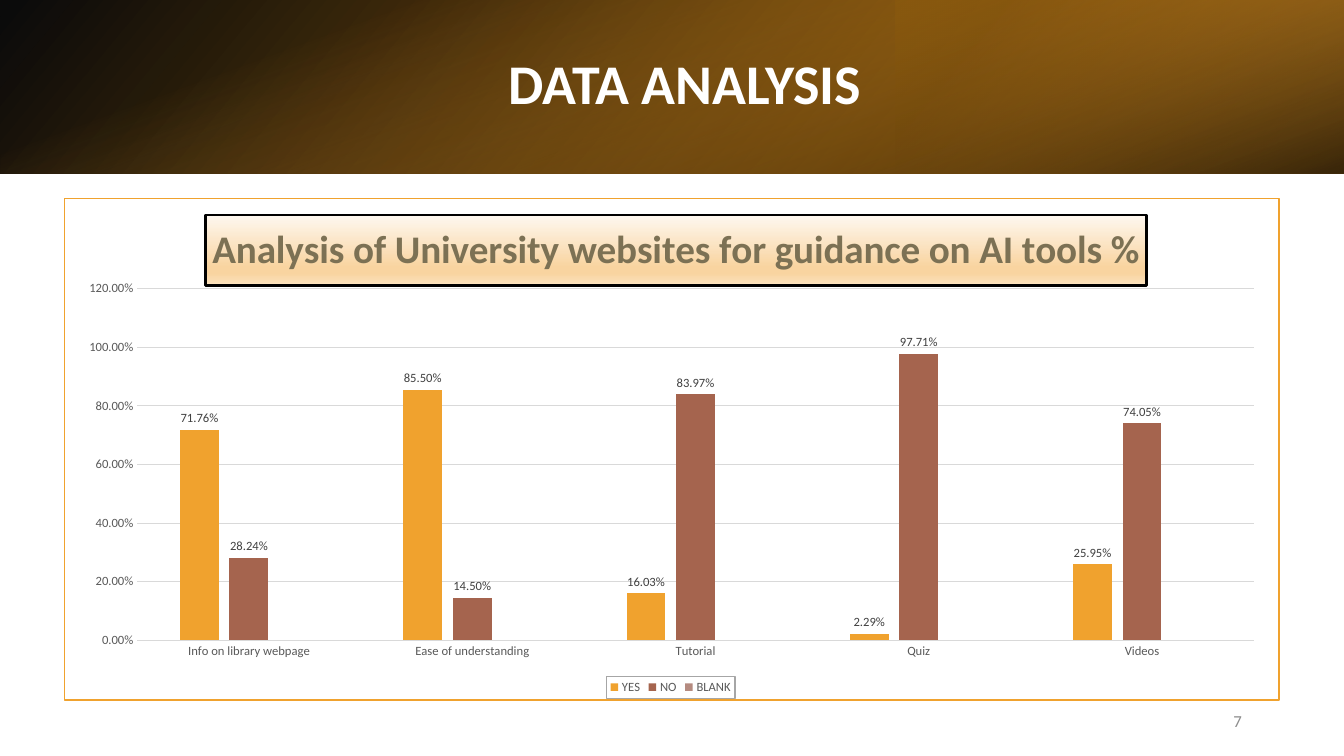
from dataclasses import dataclass

from lxml import etree
from pptx import Presentation
from pptx.chart.data import CategoryChartData
from pptx.dml.color import RGBColor
from pptx.enum import chart as ch, shapes as sh, text as tx
from pptx.oxml import parse_xml
from pptx.oxml.ns import nsdecls, qn
from pptx.util import Pt

TITLE = "DATA ANALYSIS"
PAGE_NUMBER = "7"
CHART_TITLE = "Analysis of University websites for guidance on AI tools %"
CATEGORIES = ["Info on library webpage", "Ease of understanding", "Tutorial", "Quiz", "Videos"]
SERIES = [
    ("YES", "F0A22E", [0.7176, 0.855, 0.1603, 0.0229, 0.2595]),
    ("NO", "A5644E", [0.2824, 0.145, 0.8397, 0.9771, 0.7405]),
    ("BLANK", "B58B80", [None] * 5),
]


@dataclass(frozen=True)
class Theme:
    font: str = "Calibri"
    accent: str = "F0A22E"
    white: str = "FFFFFF"
    black: str = "000000"
    chart_title: str = "7C7154"
    label: str = "404040"
    axis: str = "595959"
    grid: str = "D9D9D9"
    legend_border: str = "A6A6A6"
    page: str = "8C8C8C"
    title_size: int = 40
    chart_title_size: int = 28
    page_size: int = 12
    chart_size: int = 9


THEME = Theme()
WIDTH, HEIGHT, BAND = 960, 540, 124

# box, rotation, flipped, (position, colour, opacity) stops, gradient angle
BANDS = [
    ((0, 0, WIDTH, BAND), 0, True, [(0, "000000", 96), (100, "C87D0E", 100)], 140),
    ((WIDTH * 2 / 3, 0, WIDTH / 3, BAND), 180, True, [(19, "85540A", 68), (100, "F0A22E", 79)], 320),
    (((WIDTH - BAND) / 2, (BAND - WIDTH) / 2, BAND, WIDTH), 90, False,
     [(23, "F0A22E", 0), (99, "000000", 74)], 340),
]
CHART_TITLE_STOPS = [(0, "FEF8F0", 100), (74, "F9D4A0", 100), (83, "F9D4A0", 100), (100, "FBE3C0", 100)]


def points(*lengths):
    return [Pt(length) for length in lengths]


def rgb(colour):
    return RGBColor.from_string(colour)


def set_font(font, size, colour, bold=False):
    font.name, font.size, font.bold = THEME.font, Pt(size), bold
    font.color.rgb = rgb(colour)


def set_line(line, colour, width):
    line.color.rgb = rgb(colour)
    line.width = Pt(width)


def set_gradient(fill, properties, stops, angle):
    """Swap a solid fill in the shape properties for a linear gradient."""
    fill.solid()
    gradient = parse_xml(f'<a:gradFill {nsdecls("a")} rotWithShape="1"><a:gsLst/></a:gradFill>')
    for position, colour, opacity in stops:
        stop = etree.SubElement(gradient[0], qn("a:gs"), pos=str(position * 1000))
        stop_colour = etree.SubElement(stop, qn("a:srgbClr"), val=colour)
        etree.SubElement(stop_colour, qn("a:alpha"), val=str(opacity * 1000))
    etree.SubElement(gradient, qn("a:lin"), ang=str(angle * 60000), scaled="0")
    properties.replace(properties.find(qn("a:solidFill")), gradient)


def set_layout(element, index, **fractions):
    """Place a chart part by fractions of the chart area."""
    for old in element.findall(qn("c:layout")):
        element.remove(old)
    layout = parse_xml(f'<c:layout {nsdecls("c")}><c:manualLayout/></c:layout>')
    settings = {"xMode": "edge", "yMode": "edge", **fractions}
    if element.tag == qn("c:plotArea"):
        settings = {"layoutTarget": "inner", **settings}
    for name, value in settings.items():
        etree.SubElement(layout[0], qn(f"c:{name}"), val=str(value))
    element.insert(index, layout)


def add_band(slide, box, rotation, flipped, stops, angle):
    band = slide.shapes.add_shape(sh.MSO_SHAPE.RECTANGLE, *points(*box))
    band.shadow.inherit = False
    band.line.fill.background()
    band.rotation = rotation
    properties = band._element.spPr
    if flipped:
        properties.find(qn("a:xfrm")).set("flipH", "1")
    set_gradient(band.fill, properties, stops, angle)


def add_title(slide):
    title = slide.shapes.title
    title.left, title.top, title.width, title.height = points(108, 27.4, 790.6, 69.1)
    frame = title.text_frame
    frame.text = TITLE
    frame.vertical_anchor = tx.MSO_ANCHOR.MIDDLE
    frame.margin_right = Pt(35)
    paragraph = frame.paragraphs[0]
    paragraph.alignment = tx.PP_ALIGN.CENTER
    paragraph.line_spacing = 0.9
    set_font(paragraph.font, THEME.title_size, THEME.white, True)
    slide.shapes._spTree.append(title._element)


def add_page_number(slide):
    frame = slide.shapes.add_textbox(*points(678.2, 500.4, 216, 28.8)).text_frame
    frame.word_wrap = True
    frame.vertical_anchor = tx.MSO_ANCHOR.MIDDLE
    frame.text = PAGE_NUMBER
    frame.paragraphs[0].alignment = tx.PP_ALIGN.RIGHT
    set_font(frame.paragraphs[0].font, THEME.page_size, THEME.page)


def style_chart_title(chart):
    title = chart.chart_title
    title.text_frame.text = CHART_TITLE
    set_font(title.text_frame.paragraphs[0].font, THEME.chart_title_size, THEME.chart_title, True)
    title.include_in_layout = False
    set_line(title.format.line, THEME.black, 2)
    set_gradient(title.format.fill, title._element.find(qn("c:spPr")), CHART_TITLE_STOPS, 90)
    set_layout(title._element, 1, x=0.116, y=0.033)


def style_axes(chart):
    for axis in (chart.category_axis, chart.value_axis):
        axis.major_tick_mark = axis.minor_tick_mark = ch.XL_TICK_MARK.NONE
        set_font(axis.tick_labels.font, THEME.chart_size, THEME.axis)
    set_line(chart.category_axis.format.line, THEME.grid, 0.75)
    values = chart.value_axis
    values.minimum_scale, values.maximum_scale, values.major_unit = 0, 1.2, 0.2
    values.format.line.fill.background()
    set_line(values.major_gridlines.format.line, THEME.grid, 0.75)
    values.tick_labels.number_format = "0.00%"
    values.tick_labels.number_format_is_linked = False


def style_series(plot):
    plot.gap_width, plot.overlap = 219, -27
    plot.vary_by_categories = False
    for series, (_, colour, values) in zip(plot.series, SERIES):
        series.format.fill.solid()
        series.format.fill.fore_color.rgb = rgb(colour)
        series.invert_if_negative = False
        if any(values):
            labels = series.data_labels
            labels.show_value = True
            labels.number_format = "0.00%"
            labels.number_format_is_linked = False
            labels.position = ch.XL_LABEL_POSITION.OUTSIDE_END
            set_font(labels.font, THEME.chart_size, THEME.label)


def style_legend(chart):
    chart.has_legend = True
    legend = chart.legend
    legend.position = ch.XL_LEGEND_POSITION.BOTTOM
    legend.include_in_layout = False
    set_font(legend.font, THEME.chart_size, THEME.axis)
    set_layout(legend._element, 1, x=0.446, y=0.953, w=0.106, h=0.044)
    border = parse_xml(
        f'<c:spPr {nsdecls("c", "a")}><a:ln w="{Pt(0.75)}"><a:solidFill>'
        f'<a:srgbClr val="{THEME.legend_border}"/></a:solidFill></a:ln></c:spPr>')
    legend._element.find(qn("c:txPr")).addprevious(border)


def add_chart(slide):
    data = CategoryChartData(number_format="0.00%")
    data.categories = CATEGORIES
    for name, _, values in SERIES:
        data.add_series(name, values)
    chart = slide.shapes.add_chart(
        ch.XL_CHART_TYPE.COLUMN_CLUSTERED, *points(45.4, 141.1, 869, 359.3), data).chart
    set_font(chart.font, 10, THEME.black)
    style_chart_title(chart)
    style_axes(chart)
    style_series(chart.plots[0])
    style_legend(chart)
    chart_part = chart._chartSpace.find(qn("c:chart"))
    set_layout(chart_part.find(qn("c:plotArea")), 0, x=0.06, y=0.18, w=0.919, h=0.702)
    chart_part.addnext(parse_xml(
        f'<c:spPr {nsdecls("c", "a")}><a:solidFill><a:srgbClr val="{THEME.white}"/></a:solidFill>'
        f'<a:ln w="{Pt(1.25)}"><a:solidFill><a:srgbClr val="{THEME.accent}"/></a:solidFill></a:ln></c:spPr>'))


def main():
    presentation = Presentation()
    presentation.slide_width, presentation.slide_height = points(WIDTH, HEIGHT)
    slide = presentation.slides.add_slide(presentation.slide_layouts[5])
    for band in BANDS:
        add_band(slide, *band)
    add_title(slide)
    add_page_number(slide)
    add_chart(slide)
    presentation.save("out.pptx")


if __name__ == "__main__":
    main()
